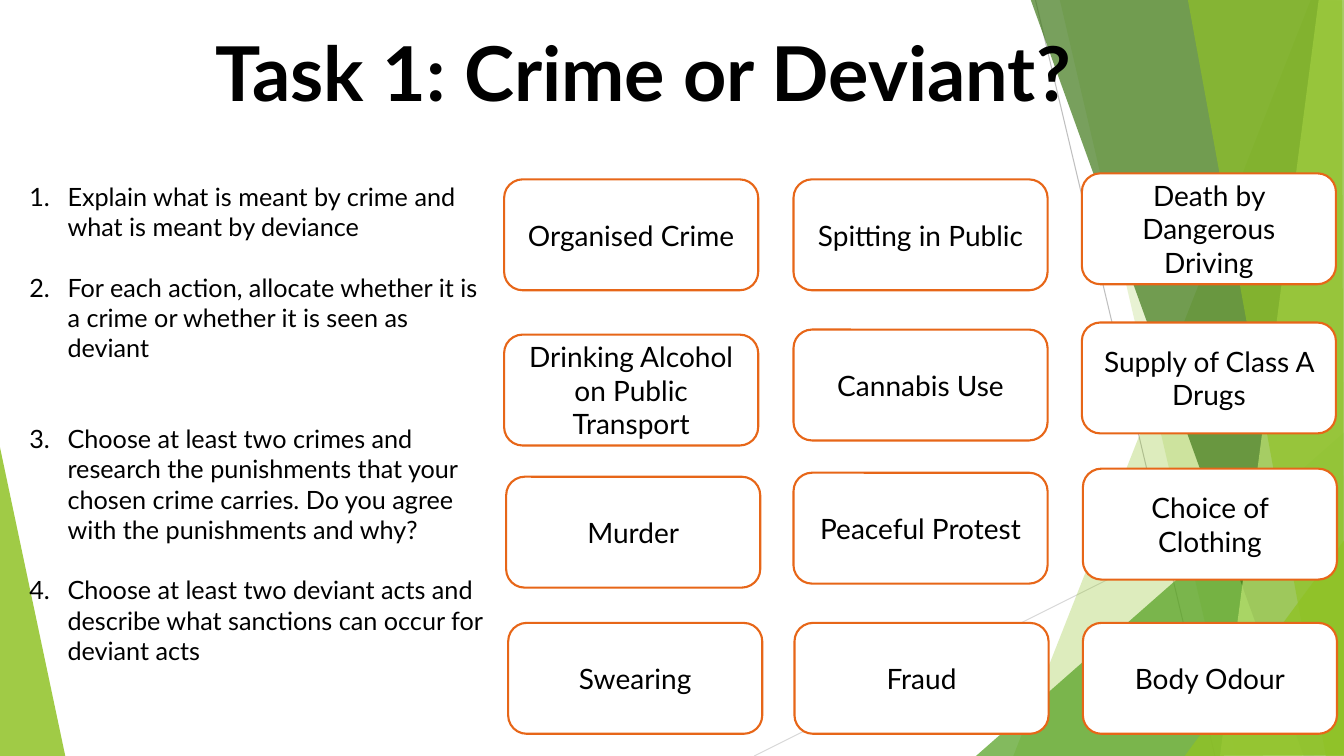
from dataclasses import dataclass

from lxml import etree
from pptx import Presentation
from pptx import util as u
from pptx.dml.color import RGBColor
from pptx.enum import shapes, text
from pptx.oxml import ns

PX = 9144  # EMU per px, 100 px to the inch
FONT = "Lato"
BLACK = "000000"
CARD_WIDTH, CARD_HEIGHT = 252, 110


@dataclass
class Facet:
    color: str
    opacity: int
    points: list[tuple[int, int]]


@dataclass
class Ray:
    color: str
    start: tuple[int, int]
    end: tuple[int, int]


@dataclass
class Card:
    label: str
    left: int
    top: int


@dataclass
class Step:
    wording: str
    blank_lines_before: int


BACKDROP = [
    Facet("90C226", 85, [(-1, 439), (65, 751), (-1, 750)]),
    Ray("D9D9D9", (748, 750), (1335, 457)),
    Ray("BFBFBF", (1027, 0), (1205, 750)),
    Facet("90C226", 30, [(1300, 0), (1005, 750), (1336, 751), (1335, 1)]),
    Facet("90C226", 20, [(1051, -1), (1226, 750), (1335, 750), (1335, -1)]),
    Facet("54A021", 72, [(968, 750), (1333, 429), (1334, 750)]),
    Facet("3F7819", 70, [(1022, -1), (1293, 750), (1335, 749), (1335, -1)]),
    Facet("C0E474", 70, [(1308, -1), (1210, 750), (1335, 750), (1334, -1)]),
    Facet("90C226", 65, [(1178, -1), (1315, 750), (1333, 750), (1331, -1)]),
    Facet("90C226", 80, [(1175, 750), (1334, 535), (1335, 749)]),
]

CARDS = [
    Card("Organised Crime", 500, 178),
    Card("Spitting in Public", 787, 178),
    Card("Death by Dangerous Driving", 1073, 172),
    Card("Drinking Alcohol on Public Transport", 500, 332),
    Card("Cannabis Use", 787, 327),
    Card("Supply of Class A Drugs", 1073, 320),
    Card("Murder", 502, 473),
    Card("Peaceful Protest", 787, 469),
    Card("Choice of Clothing", 1074, 465),
    Card("Swearing", 504, 618),
    Card("Fraud", 788, 618),
    Card("Body Odour", 1074, 618),
]

STEPS = [
    Step("Explain what is meant by crime and what is meant by deviance", 0),
    Step("For each action, allocate whether it is a crime or whether it is seen as deviant", 1),
    Step("Choose at least two crimes and research the punishments that your chosen crime "
         "carries. Do you agree with the punishments and why?", 2),
    Step("Choose at least two deviant acts and describe what sanctions can occur for "
         "deviant acts", 1),
]


def px(length: int) -> u.Emu:
    return u.Emu(length * PX)


def rgb(color: str) -> RGBColor:
    return RGBColor.from_string(color)


def add_run(paragraph, wording: str, size: int, bold: bool = False) -> None:
    run = paragraph.add_run()
    run.text = wording
    run.font.name = FONT
    run.font.size = u.Pt(size)
    run.font.bold = bold
    run.font.color.rgb = rgb(BLACK)


def place(holder, left: int, top: int, width: int, height: int) -> None:
    holder.left, holder.top = px(left), px(top)
    holder.width, holder.height = px(width), px(height)
    holder.text_frame.auto_size = text.MSO_AUTO_SIZE.NONE
    holder.text_frame.vertical_anchor = text.MSO_ANCHOR.TOP


def draw_facet(group, facet: Facet) -> None:
    builder = group.shapes.build_freeform(*facet.points[0], scale=PX)
    builder.add_line_segments(facet.points[1:], close=True)
    outline = builder.convert_to_shape()
    outline.shadow.inherit = False
    outline.line.fill.background()
    outline.fill.solid()
    outline.fill.fore_color.rgb = rgb(facet.color)
    color_element = outline._element.spPr.find(".//" + ns.qn("a:srgbClr"))
    etree.SubElement(color_element, ns.qn("a:alpha"), val=str(facet.opacity * 1000))


def draw_ray(group, ray: Ray) -> None:
    line = group.shapes.add_connector(
        shapes.MSO_CONNECTOR.STRAIGHT, *map(px, ray.start + ray.end))
    line.line.color.rgb = rgb(ray.color)
    line.line.width = u.Pt(0.75)
    etree.SubElement(line._element.spPr, ns.qn("a:effectLst"))


def draw_card(slide, card: Card) -> None:
    box = slide.shapes.add_shape(
        shapes.MSO_SHAPE.ROUNDED_RECTANGLE,
        px(card.left), px(card.top), px(CARD_WIDTH), px(CARD_HEIGHT))
    box.shadow.inherit = False
    box.fill.solid()
    box.fill.fore_color.rgb = rgb("FFFFFF")
    box.line.color.rgb = rgb("E76618")
    box.line.width = u.Pt(1.5)
    box.text_frame.word_wrap = True
    box.text_frame.vertical_anchor = text.MSO_ANCHOR.MIDDLE
    label = box.text_frame.paragraphs[0]
    label.alignment = text.PP_ALIGN.CENTER
    add_run(label, card.label, 20)


def write_step(paragraph, step: Step) -> None:
    paragraph.space_before = u.Pt(21.6 * step.blank_lines_before)
    add_run(paragraph, step.wording, 18)
    properties = paragraph._p.get_or_add_pPr()
    properties.set("marL", str(px(38)))
    properties.set("indent", str(px(-38)))
    etree.SubElement(properties, ns.qn("a:buFont"), typeface="+mj-lt")
    etree.SubElement(properties, ns.qn("a:buAutoNum"), type="arabicPeriod")


def main() -> None:
    deck = Presentation()
    deck.slide_width, deck.slide_height = px(1333), px(750)
    slide = deck.slides.add_slide(deck.slide_layouts[1])
    title, instructions = slide.placeholders

    # Green backdrop, sent behind the placeholders
    backdrop = slide.shapes.add_group_shape()
    for part in BACKDROP:
        if isinstance(part, Facet):
            draw_facet(backdrop, part)
        else:
            draw_ray(backdrop, part)
    title._element.addprevious(backdrop._element)

    # Title
    place(title, 175, 21, 926, 101)
    heading = title.text_frame.paragraphs[0]
    heading.alignment = text.PP_ALIGN.CENTER
    add_run(heading, "Task 1: Crime or Deviant?", 54, bold=True)

    # Numbered instructions
    place(instructions, 19, 175, 470, 555)
    for index, step in enumerate(STEPS):
        frame = instructions.text_frame
        write_step(frame.add_paragraph() if index else frame.paragraphs[0], step)

    # Action cards
    for card in CARDS:
        draw_card(slide, card)

    deck.save("out.pptx")


if __name__ == "__main__":
    main()
